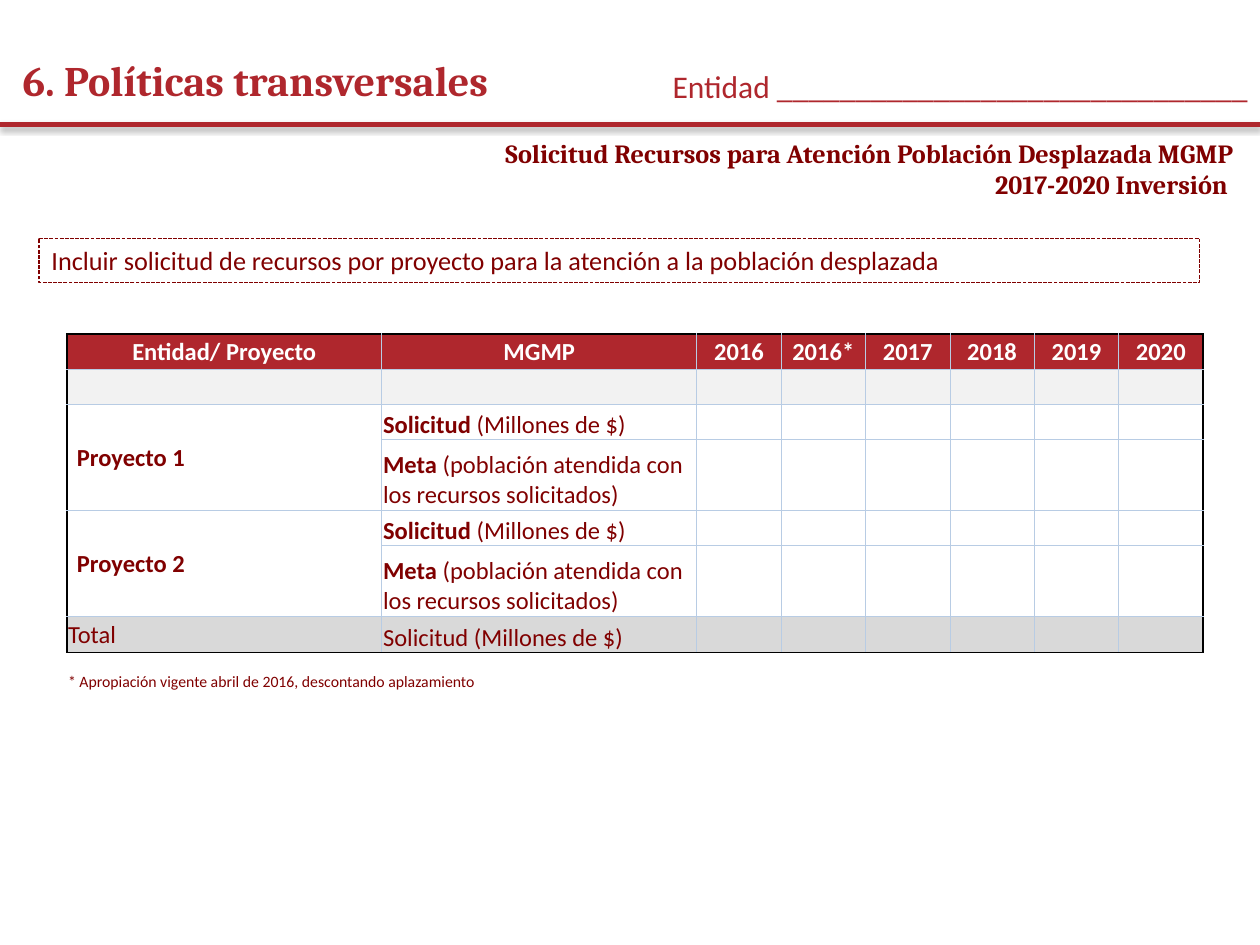
from lxml.etree import SubElement
from pptx import Presentation
from pptx.dml.color import RGBColor
from pptx.enum.dml import MSO_LINE_DASH_STYLE as DASH
from pptx.enum.shapes import MSO_CONNECTOR, MSO_SHAPE
from pptx.enum.text import MSO_ANCHOR as ANCHOR, PP_ALIGN as ALIGN
from pptx.oxml.ns import qn
from pptx.util import Inches, Pt

COLORS = {
    "red": "AF272D", "maroon": "800000", "white": "FFFFFF", "black": "000000",
    "grid": "B8CCE4", "light": "F2F2F2", "total": "D9D9D9",
}
YEARS = ["2016", "2016*", "2017", "2018", "2019", "2020"]
REQUEST = "(Millones de $)"
GOAL = "(población atendida con los recursos solicitados)"
COLUMN_WIDTHS = [2.5, 2.5] + [0.67] * len(YEARS)
ROW_HEIGHTS = [0.28, 0.28, 0.28, 0.56, 0.28, 0.56, 0.29, 0.31]
TOTAL_ROW, NOTE_ROW = 6, 7


def rgb(name):
    """Return the named colour."""
    return RGBColor.from_string(COLORS[name])


def write(paragraph, parts, size, color, font="Calibri", align=ALIGN.LEFT):
    """Write (text, bold) parts as formatted runs."""
    paragraph.alignment = align
    for text, bold in parts:
        run = paragraph.add_run()
        run.text = text
        run.font.name, run.font.size, run.font.bold = font, Pt(size), bold
        run.font.color.rgb = rgb(color)


def add_text(slide, box, text, size, color, font="Calibri", bold=False, anchor=ANCHOR.TOP):
    """Add a right-aligned text box."""
    frame = slide.shapes.add_textbox(*map(Inches, box)).text_frame
    frame.word_wrap = True
    frame.vertical_anchor = anchor
    write(frame.paragraphs[0], [(text, bold)], size, color, font, ALIGN.RIGHT)


def add_header(slide, box):
    """Place the title, the entity field and the shadowed rule below them."""
    left, top, width, height = box
    title = slide.shapes.title
    title.left, title.top = Inches(left + 0.08), Inches(top + 0.36)
    title.width, title.height = Inches(8.3), Inches(0.55)
    title.text_frame.vertical_anchor = ANCHOR.MIDDLE
    write(title.text_frame.paragraphs[0], [("6. Políticas transversales", True)], 24, "red", "Cambria")
    add_text(slide, (left + width - 5.55, top + 0.48, 5.55, 0.4), "Entidad " + "_" * 30, 18, "red")

    bottom = Inches(top + height)
    rule = slide.shapes.add_connector(
        MSO_CONNECTOR.STRAIGHT, Inches(left), bottom, Inches(left + width), bottom)
    rule.line.color.rgb = rgb("red")
    rule.line.width = Pt(3)
    effects = SubElement(rule._element.spPr, qn("a:effectLst"))
    shadow = SubElement(effects, qn("a:outerShdw"), blurRad=str(Pt(3.1)), dist=str(Pt(1.8)),
                        dir="5400000", rotWithShape="0")
    shade = SubElement(shadow, qn("a:srgbClr"), val=COLORS["black"])
    SubElement(shade, qn("a:alpha"), val="35000")


def add_instruction(slide, box):
    """Place the dashed instruction box."""
    shape = slide.shapes.add_shape(MSO_SHAPE.RECTANGLE, *map(Inches, box))
    shape.shadow.inherit = False
    shape.fill.background()
    shape.line.color.rgb = rgb("maroon")
    shape.line.width = Pt(0.75)
    shape.line.dash_style = DASH.SQUARE_DOT
    text = "Incluir solicitud de recursos por proyecto para la atención a la población desplazada"
    write(shape.text_frame.paragraphs[0], [(text, False)], 15, "maroon")


def set_borders(cell, row, column):
    """Draw a pale grid inside a black frame, and nothing around the note."""
    outer = {
        "L": column == 0,
        "R": column == len(COLUMN_WIDTHS) - 1,
        "T": row in (0, NOTE_ROW),
        "B": row == TOTAL_ROW,
    }
    properties = cell._tc.get_or_add_tcPr()
    for side, framed in outer.items():
        line = SubElement(properties, qn(f"a:ln{side}"), w=str(Pt(1 if framed else 0.5)))
        if row == NOTE_ROW and side != "T":
            SubElement(line, qn("a:noFill"))
            continue
        fill = SubElement(line, qn("a:solidFill"))
        SubElement(fill, qn("a:srgbClr"), val=COLORS["black" if framed else "grid"])


def format_cell(cell, row, column):
    """Set the margins, borders and fill of a cell."""
    cell.margin_left = cell.margin_right = cell.margin_top = Inches(0.01)
    cell.margin_bottom = 0
    cell.vertical_anchor = ANCHOR.MIDDLE if row == 0 or column == 0 else ANCHOR.BOTTOM
    set_borders(cell, row, column)
    fill_name = {0: "red", 1: "light", TOTAL_ROW: "total"}.get(row)
    if fill_name:
        cell.fill.solid()
        cell.fill.fore_color.rgb = rgb(fill_name)
    else:
        cell.fill.background()


def add_request_table(slide, box):
    """Place the table of requested resources by project and year."""
    table = slide.shapes.add_table(
        len(ROW_HEIGHTS), len(COLUMN_WIDTHS), *map(Inches, box)).table
    table.first_row = table.horz_banding = False
    for column, width in zip(table.columns, COLUMN_WIDTHS):
        column.width = Inches(width)
    for row, height in zip(table.rows, ROW_HEIGHTS):
        row.height = Inches(height)

    contents = {(0, column): [(text, True)]
                for column, text in enumerate(["Entidad/ Proyecto", "MGMP"] + YEARS)}
    for number, row in enumerate((2, 4), start=1):
        contents[row, 0] = [(f"Proyecto {number}", True)]
        contents[row, 1] = [("Solicitud", True), (f" {REQUEST}", False)]
        contents[row + 1, 1] = [("Meta", True), (f" {GOAL}", False)]
    contents[TOTAL_ROW, 0] = [("Total", False)]
    contents[TOTAL_ROW, 1] = [(f"Solicitud {REQUEST}", False)]
    contents[NOTE_ROW, 0] = [("* Apropiación vigente abril de 2016, descontando aplazamiento", False)]

    for row in range(len(ROW_HEIGHTS)):
        for column in range(len(COLUMN_WIDTHS)):
            cell = table.cell(row, column)
            format_cell(cell, row, column)
            paragraph = cell.text_frame.paragraphs[0]
            if (row, column) in contents:
                write(paragraph, contents[row, column], 9 if row == NOTE_ROW else 14,
                      "white" if row == 0 else "maroon",
                      align=ALIGN.CENTER if row == 0 else ALIGN.LEFT)
            else:
                SubElement(paragraph._p, qn("a:endParaRPr"), sz="900")

    for row in (2, 4):
        table.cell(row, 0).margin_left = Inches(0.08)
        table.cell(row, 0).merge(table.cell(row + 1, 0))
    note = table.cell(NOTE_ROW, 0)
    note.vertical_anchor = ANCHOR.BOTTOM
    note.merge(table.cell(NOTE_ROW, 1))


def main():
    """Build and save the slide."""
    presentation = Presentation()
    presentation.slide_width, presentation.slide_height = Inches(10), Inches(7.5)
    slide = presentation.slides.add_slide(presentation.slide_layouts[5])
    add_header(slide, (0, 0, 10, 0.99))
    add_text(slide, (3.5, 1.14, 6.39, 0.39),
             "Solicitud Recursos para Atención Población Desplazada MGMP 2017-2020 Inversión ",
             15, "maroon", "Cambria", True, ANCHOR.MIDDLE)
    add_instruction(slide, (0.31, 1.89, 9.21, 0.35))
    add_request_table(slide, (0.53, 2.65, sum(COLUMN_WIDTHS), sum(ROW_HEIGHTS)))
    presentation.save("out.pptx")


if __name__ == "__main__":
    main()
